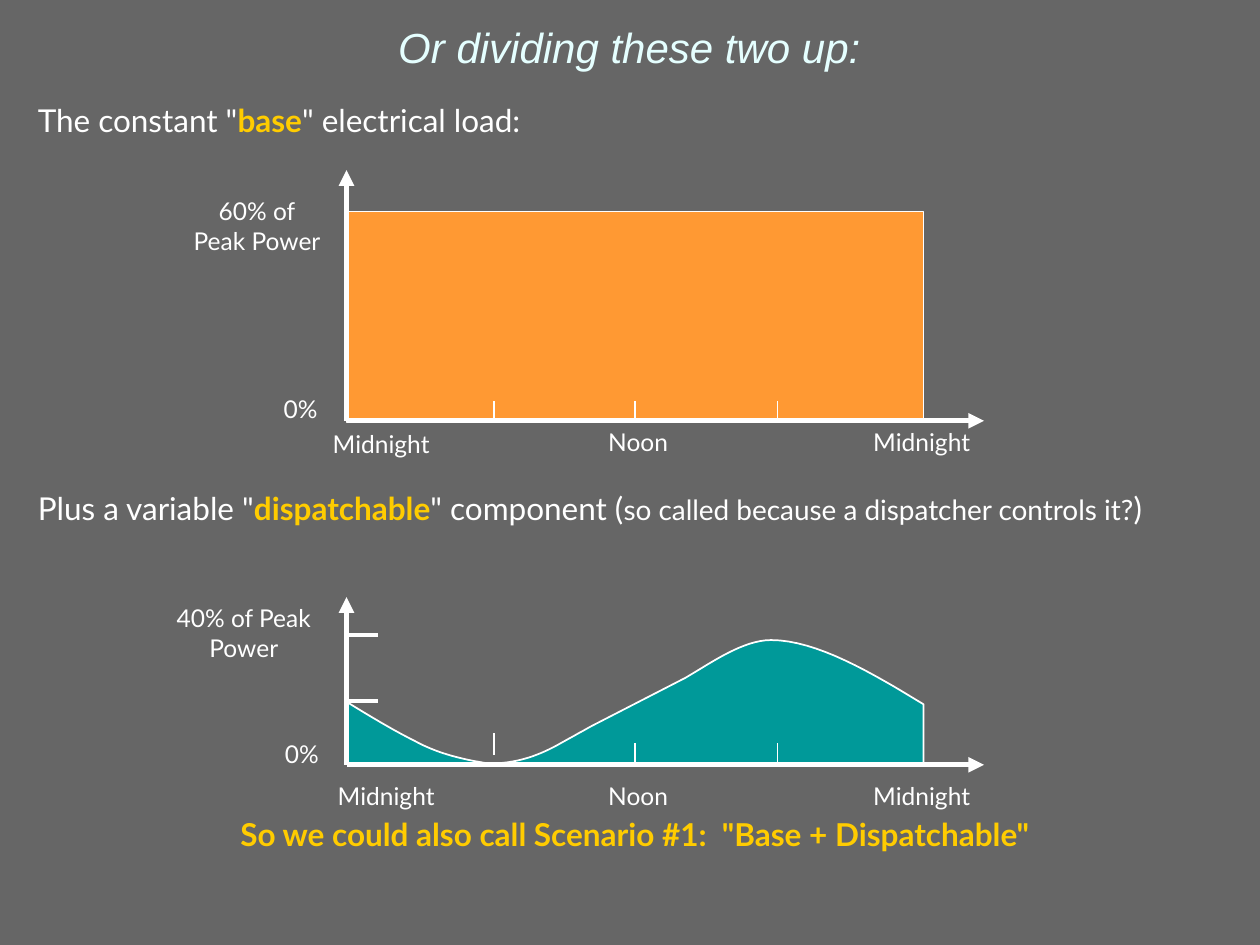
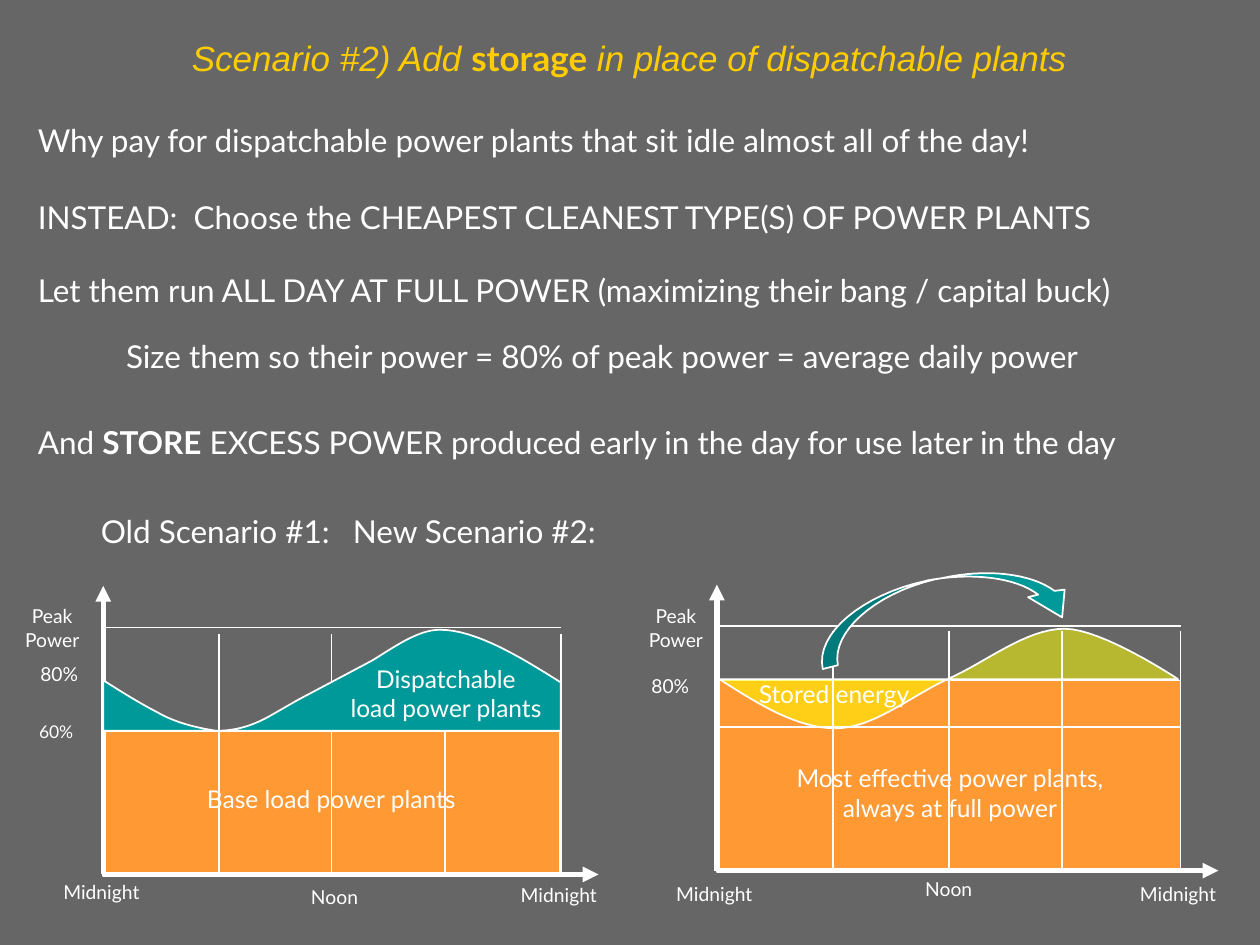
"""Builds two slides on splitting daily electrical load into base, dispatchable and stored power."""
from dataclasses import dataclass

from lxml import etree
from pptx import Presentation
from pptx.dml.color import RGBColor
from pptx.enum.shapes import MSO_CONNECTOR, MSO_SHAPE
from pptx.enum.text import MSO_ANCHOR, MSO_AUTO_SIZE, PP_ALIGN
from pptx.oxml.ns import qn
from pptx.util import Pt

PX = 9144
STRAIGHT = MSO_CONNECTOR.STRAIGHT
RECT = MSO_SHAPE.RECTANGLE
TOP, MIDDLE = MSO_ANCHOR.TOP, MSO_ANCHOR.MIDDLE
LEFT, CENTER, RIGHT = PP_ALIGN.LEFT, PP_ALIGN.CENTER, PP_ALIGN.RIGHT
NO_AUTOSIZE = MSO_AUTO_SIZE.NONE
COLORS = {
    "background": "666666",
    "white": "FFFFFF",
    "ice": "E5FFFF",
    "gold": "FFCC00",
    "orange": "FF9933",
    "teal": "009999",
    "dark teal": "007A7A",
    "yellow": "FFFF00",
}
TEXT_FONT, TITLE_FONT = "Lato", "Arial"
INSET = 5
CURVE_STEPS = 16

DISPATCH_BOX = (275, 507, 458, 99)
DISPATCH_CURVE = [
    (275, 557),
    (293, 568, 311, 579, 329, 588),
    (347, 598, 368, 603, 388, 606),
    (408, 606, 425, 601, 443, 591),
    (452, 586, 461, 581, 470, 576),
    (544, 538),
    (566, 525, 590, 508, 612, 508),
    (648, 508, 692, 534, 733, 559),
    (733, 606),
    (275, 606),
]
STORAGE_CURVE = [
    (571, 539),
    (602, 559, 633, 578, 663, 578),
    (693, 578, 722, 553, 752, 539),
    (782, 526, 814, 499, 845, 499),
    (875, 499, 935, 539, 935, 539),
]
ARROW_HEAD = [
    (843, 490), (816, 474), (824, 472),
    (806, 458, 770, 454, 735, 461),
    (747, 459),
    (783, 451, 818, 455, 837, 469),
    (845, 468),
]
ARROW_TAIL = [
    (741, 460),
    (693, 472, 660, 502, 665, 528),
    (653, 531),
    (647, 503, 684, 472, 735, 461),
]


@dataclass
class Run:
    """A stretch of text in one format."""
    text: str
    color: str = "white"
    size: int = 18
    bold: bool = False
    italic: bool = False
    font: str = TEXT_FONT


@dataclass
class Para:
    """A body paragraph, with space before in points and lengths in px."""
    runs: list
    before: float = 0
    align: PP_ALIGN = LEFT
    level: int = 0
    indent: int = 0
    tabs: tuple = ()


@dataclass
class Label:
    """A small text box beside or inside a plot."""
    text: str
    x: int
    y: int
    w: int
    h: int = 34
    size: int = 14
    align: PP_ALIGN = CENTER


@dataclass
class Line:
    """A straight white line."""
    x1: int
    y1: int
    x2: int
    y2: int
    width: float = 1
    arrow: bool = False


def rgb(name: str) -> RGBColor:
    """Looks up a named colour."""
    return RGBColor.from_string(COLORS[name])


def place(shape, x: int, y: int, w: int, h: int) -> None:
    """Moves and sizes a shape."""
    shape.left, shape.top, shape.width, shape.height = (v * PX for v in (x, y, w, h))


def set_frame(tf, anchor: MSO_ANCHOR = TOP) -> None:
    """Gives a text frame the shared insets and wrapping."""
    tf.word_wrap = True
    tf.auto_size = NO_AUTOSIZE
    tf.vertical_anchor = anchor
    tf.margin_left = tf.margin_right = tf.margin_top = tf.margin_bottom = INSET * PX


def add_run(p, run: Run) -> None:
    """Appends one formatted run."""
    r = p.add_run()
    r.text = run.text
    r.font.name, r.font.size = run.font, Pt(run.size)
    r.font.bold, r.font.italic = run.bold, run.italic
    r.font.color.rgb = rgb(run.color)


def add_slide(prs, title_y: int, title: list, body_box: tuple, paras: list):
    """Adds a slide and fills its title and body placeholders."""
    s = prs.slides.add_slide(prs.slide_layouts[1])
    place(s.shapes.title, 33, title_y, 933, 58)
    set_frame(s.shapes.title.text_frame, MIDDLE)
    p = s.shapes.title.text_frame.paragraphs[0]
    p.alignment = CENTER
    for run in title:
        add_run(p, run)
    body = s.placeholders[1]
    place(body, *body_box)
    tf = body.text_frame
    set_frame(tf)
    for i, para in enumerate(paras):
        p = tf.add_paragraph() if i else tf.paragraphs[0]
        p.alignment, p.level = para.align, para.level
        pPr = p._p.get_or_add_pPr()
        pPr.set("marL", "0")
        pPr.set("indent", str(para.indent * PX))
        etree.SubElement(pPr, qn("a:buNone"))
        if para.tabs:
            tabs = etree.SubElement(pPr, qn("a:tabLst"))
            for pos in para.tabs:
                etree.SubElement(tabs, qn("a:tab"), pos=str(pos * PX), algn="l")
        p.space_before = Pt(para.before)
        for run in para.runs:
            add_run(p, run)
    return s


def add_labels(s, labels: list) -> None:
    """Draws plot labels, one paragraph per line of text."""
    for label in labels:
        box = s.shapes.add_textbox(0, 0, 0, 0)
        place(box, label.x, label.y, label.w, label.h)
        tf = box.text_frame
        set_frame(tf)
        for i, text in enumerate(label.text.split("\n")):
            p = tf.add_paragraph() if i else tf.paragraphs[0]
            p.alignment = label.align
            add_run(p, Run(text, size=label.size))


def add_line(s, line: Line):
    """Draws a white line, with an arrowhead at its end if asked."""
    c = s.shapes.add_connector(STRAIGHT, *(v * PX for v in (line.x1, line.y1, line.x2, line.y2)))
    c.line.color.rgb = rgb("white")
    c.line.width = Pt(line.width)
    spPr = c._element.spPr
    if line.arrow:
        etree.SubElement(spPr.find(qn("a:ln")), qn("a:tailEnd"), type="triangle")
    etree.SubElement(spPr, qn("a:effectLst"))
    return c


def add_axes(s, x: int, y: int, right: int, top: int) -> None:
    """Draws the two arrowed axes from their origin."""
    add_line(s, Line(x, y, right, y, 3, True))
    add_line(s, Line(x, y, x, top, 3, True))


def add_verticals(s, xs: tuple, bottom: int, top: int) -> None:
    """Draws thin upright ticks or grid lines."""
    for x in xs:
        add_line(s, Line(x, bottom, x, top))


def paint(shape, color: str, alpha: int = 100) -> None:
    """Fills a shape, outlines it in white and removes its shadow."""
    shape.shadow.inherit = False
    shape.fill.solid()
    shape.fill.fore_color.rgb = rgb(color)
    if alpha < 100:
        clr = shape._element.spPr.find(qn("a:solidFill"))[0]
        etree.SubElement(clr, qn("a:alpha"), val=str(alpha * 1000))
    shape.line.color.rgb = rgb("white")
    shape.line.width = Pt(1)


def add_base_load(s, x: int, y: int, w: int, h: int):
    """Draws the constant load as an orange block."""
    shape = s.shapes.add_shape(RECT, x * PX, y * PX, w * PX, h * PX)
    paint(shape, "orange")
    return shape


def add_noon(s, block, x: int, bottom: int, top: int) -> None:
    """Draws the noon line, joined to the middle of the block's lower side."""
    add_line(s, Line(x, bottom, x, top)).begin_connect(block, 2)


def flatten(segments: list) -> list:
    """Turns points and cubic curves into a list of points."""
    points = [segments[0]]
    for seg in segments[1:]:
        if len(seg) == 2:
            points.append(seg)
            continue
        x0, y0 = points[-1]
        x1, y1, x2, y2, x3, y3 = seg
        for i in range(1, CURVE_STEPS + 1):
            t = i / CURVE_STEPS
            a, b, c, d = (1 - t) ** 3, 3 * t * (1 - t) ** 2, 3 * t * t * (1 - t), t ** 3
            points.append((a * x0 + b * x1 + c * x2 + d * x3, a * y0 + b * y1 + c * y2 + d * y3))
    return points


def add_outline(s, points: list, color: str, alpha: int = 100) -> None:
    """Draws a closed filled outline."""
    emu = [(round(x * PX), round(y * PX)) for x, y in points]
    builder = s.shapes.build_freeform(*emu[0])
    builder.add_line_segments(emu[1:], close=True)
    paint(builder.convert_to_shape(), color, alpha)


def add_dispatch(s, x: int, y: int, w: int, h: int) -> None:
    """Draws the variable load fitted to a box."""
    x0, y0, w0, h0 = DISPATCH_BOX
    points = [(x + (px - x0) * w / w0, y + (py - y0) * h / h0) for px, py in flatten(DISPATCH_CURVE)]
    add_outline(s, points, "teal")


def build_split(prs) -> None:
    """Builds the slide that separates base from dispatchable load."""
    s = add_slide(
        prs, 8, [Run("Or dividing these two up:", "ice", 24, italic=True, font=TITLE_FONT)],
        (25, 75, 958, 650),
        [
            Para([Run('The constant "'), Run("base", "gold", bold=True), Run('" electrical load:')]),
            Para([Run('Plus a variable "'), Run("dispatchable", "gold", bold=True),
                  Run('" component ('),
                  Run("so called because a dispatcher controls it?", size=16), Run(")")], 200),
            Para([Run('So we could also call Scenario #1:  "Base + Dispatchable"', "gold", bold=True)],
                 164.8, CENTER),
        ])
    block = add_base_load(s, 275, 168, 458, 167)
    add_axes(s, 275, 334, 781, 135)
    add_verticals(s, (392, 617, 733), 335, 318)
    add_noon(s, block, 504, 335, 318)

    add_dispatch(s, *DISPATCH_BOX)
    add_axes(s, 275, 607, 781, 474)
    add_verticals(s, (392,), 599, 582)
    add_verticals(s, (504, 617, 733), 607, 590)
    for y in (504, 556):
        add_line(s, Line(275, y, 300, y, 2.25))
    add_labels(s, [
        Label("60% of\nPeak Power", 125, 151, 158, 57),
        Label("0%", 182, 308, 75, align=RIGHT),
        Label("Midnight", 240, 336, 125),
        Label("40% of Peak Power", 131, 474, 125, 57),
        Label("0%", 183, 582, 75, align=RIGHT),
        Label("Midnight", 244, 615, 125),
    ])
    for y in (334, 615):
        add_labels(s, [Label("Noon", 444, y, 125), Label("Midnight", 669, y, 125)])


def build_storage(prs) -> None:
    """Builds the slide that replaces dispatchable plants by storage."""
    s = add_slide(
        prs, 17,
        [Run("Scenario #2) Add ", "gold", 20, italic=True, font=TITLE_FONT),
         Run("storage", "gold", 20, bold=True),
         Run(" in place of dispatchable plants", "gold", 20, italic=True, font=TITLE_FONT)],
        (25, 91, 933, 415),
        [
            Para([Run("Why pay for dispatchable power plants that sit idle almost all of the day!")]),
            Para([Run("INSTEAD:  Choose the CHEAPEST CLEANEST TYPE(S) OF POWER PLANTS")], 22.4),
            Para([Run("Let them run ALL DAY AT FULL POWER (maximizing their bang / capital buck)")], 20),
            Para([Run("Size them so their power = 80% of peak power = average daily power")],
                 16.4, level=1, indent=70),
            Para([Run("And "), Run("STORE", bold=True),
                  Run(" EXCESS POWER produced early in the day for use later in the day")], 27.2),
            Para([Run("\tOld Scenario #1:\tNew Scenario #2:")], 29.6, tabs=(100, 600)),
        ])
    block = add_base_load(s, 82, 580, 362, 115)
    add_axes(s, 82, 694, 475, 465)
    add_verticals(s, (174, 353, 445), 694, 503)
    add_noon(s, block, 263, 695, 503)
    add_line(s, Line(82, 498, 445, 498))
    add_dispatch(s, 82, 499, 363, 81)

    block = add_base_load(s, 569, 540, 368, 152)
    add_axes(s, 569, 691, 967, 464)
    add_outline(s, flatten(STORAGE_CURVE), "yellow", 53)
    add_verticals(s, (661, 843, 937), 691, 501)
    add_noon(s, block, 753, 692, 501)
    for y in (577, 497):
        add_line(s, Line(569, y, 937, y))
    add_outline(s, flatten(ARROW_HEAD), "teal")
    add_outline(s, flatten(ARROW_TAIL), "dark teal")
    add_labels(s, [
        Label("Peak\nPower", 8, 475, 67, 46, 11),
        Label("80%", 27, 521, 59, 28, 11, LEFT),
        Label("60%", 26, 567, 59, 27, 10, LEFT),
        Label("Midnight", 31, 694, 99, 28, 11),
        Label("Noon", 216, 698, 99, 28, 11),
        Label("Midnight", 394, 696, 99, 28, 11),
        Label("Base load power plants", 117, 617, 292),
        Label("Dispatchable\nload power plants", 233, 522, 242, 57),
        Label("Peak Power", 498, 475, 77, 46, 11),
        Label("80%", 512, 530, 60, 28, 11, LEFT),
        Label("Midnight", 517, 695, 100, 28, 11),
        Label("Noon", 703, 691, 100, 28, 11),
        Label("Midnight", 885, 695, 100, 28, 11),
        Label("Most effective power plants,\nalways at full power", 608, 601, 292, 57),
        Label("Stored energy", 558, 534, 208),
    ])


def main() -> None:
    """Builds and saves the presentation."""
    prs = Presentation()
    prs.slide_width, prs.slide_height = 1000 * PX, 750 * PX
    fill = prs.slide_master.background.fill
    fill.solid()
    fill.fore_color.rgb = rgb("background")
    build_split(prs)
    build_storage(prs)
    prs.save("out.pptx")


if __name__ == "__main__":
    main()
